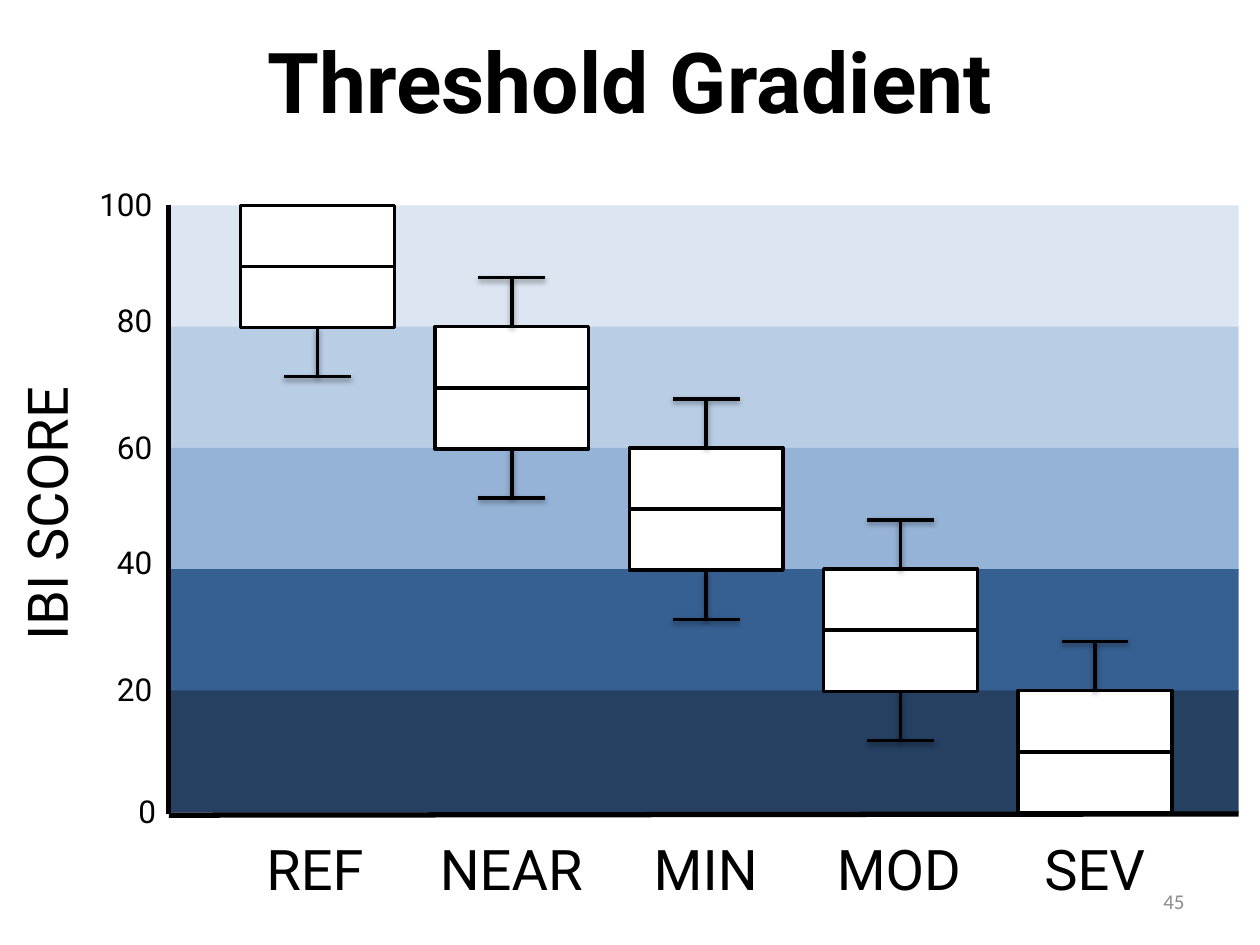
"""Build the Threshold Gradient slide: five box plots over shaded score bands."""
from lxml.etree import SubElement
from pptx import Presentation
from pptx.dml.color import RGBColor
from pptx.enum.shapes import MSO_CONNECTOR, MSO_SHAPE
from pptx.enum.text import MSO_ANCHOR, PP_ALIGN
from pptx.oxml.ns import qn
from pptx.util import Inches, Pt

BLACK = RGBColor(0x00, 0x00, 0x00)
WHITE = RGBColor(0xFF, 0xFF, 0xFF)
GREY = RGBColor(0x8C, 0x8C, 0x8C)
BANDS = [
    RGBColor(0xDC, 0xE6, 0xF2),
    RGBColor(0xB9, 0xCD, 0xE5),
    RGBColor(0x95, 0xB3, 0xD7),
    RGBColor(0x37, 0x60, 0x92),
    RGBColor(0x25, 0x40, 0x61),
]

AXIS_X, RIGHT, TOP, BOTTOM = 1.34, 9.83, 1.63, 6.46
BAND_STEP, BAND_H = (5.48 - TOP) / 4, 0.97
BOX_X, BOX_W = 1.91, 1.22
BOX_STEP = (8.08 - BOX_X) / 4
WHISKER, CAP = 0.39, 0.53

CATEGORIES = [("REF", 1.01), ("NEAR", 1.34), ("MIN", 1.03), ("MOD", 1.21), ("SEV", 1.0)]
TICKS = [
    ("100", 0.69, 1.42, 0.84),
    ("80", 0.83, 2.34, 0.59),
    ("60", 0.83, 3.35, 0.84),
    ("40", 0.83, 4.26, 0.56),
    ("20", 0.83, 5.27, 0.56),
    ("0", 1.0, 6.24, 0.5),
]


class Deck:
    """Hold the text style and the current slide."""

    font = {"name": "Roboto", "size": Pt(18), "bold": False}

    def __init__(self, slide):
        self.s = slide

    def add_run(self, tf, text, color=BLACK, align=PP_ALIGN.LEFT, **changes):
        p = tf.paragraphs[0]
        p.alignment = align
        r = p.add_run()
        r.text = text
        for name, value in {**self.font, **changes}.items():
            setattr(r.font, name, value)
        r.font.color.rgb = color

    def title(self, text, x, y, w, h):
        sp = self.s.shapes.title
        frame = {"left": x, "top": y, "width": w, "height": h}
        for name, value in frame.items():
            setattr(sp, name, Inches(value))
        sp.text_frame.vertical_anchor = MSO_ANCHOR.MIDDLE
        self.add_run(sp.text_frame, text, align=PP_ALIGN.CENTER, size=Pt(48), bold=True)

    def text(self, text, x, y, w, h, wrap=True, anchor=MSO_ANCHOR.TOP, **style):
        sp = self.s.shapes.add_textbox(Inches(x), Inches(y), Inches(w), Inches(h))
        sp.text_frame.word_wrap = wrap
        sp.text_frame.vertical_anchor = anchor
        self.add_run(sp.text_frame, text, **style)
        return sp

    def rect(self, x, y, w, h, fill, line=None):
        sp = self.s.shapes.add_shape(
            MSO_SHAPE.RECTANGLE, Inches(x), Inches(y), Inches(w), Inches(h))
        sp.shadow.inherit = False
        sp.fill.solid()
        sp.fill.fore_color.rgb = fill
        if line:
            sp.line.color.rgb = BLACK
            sp.line.width = Pt(line)
        else:
            sp.line.fill.background()
        return sp

    def line(self, x1, y1, x2, y2, width, shadow=False):
        cx = self.s.shapes.add_connector(
            MSO_CONNECTOR.STRAIGHT, Inches(x1), Inches(y1), Inches(x2), Inches(y2))
        cx.line.color.rgb = BLACK
        cx.line.width = Pt(width)
        effects = SubElement(cx._element.spPr, qn("a:effectLst"))
        if shadow:
            outer = SubElement(
                effects, qn("a:outerShdw"), blurRad=str(Pt(3.1)), dist=str(Pt(1.6)),
                dir="5400000", rotWithShape="0")
            color = SubElement(outer, qn("a:srgbClr"), val=str(BLACK))
            SubElement(color, qn("a:alpha"), val="38000")
        return cx

    def whisker(self, box, site, x, y, length):
        stem = self.line(x, y, x, y + length, 2, shadow=True)
        stem.begin_connect(box, site)
        self.line(x - CAP / 2, y + length, x + CAP / 2, y + length, 2, shadow=True)

    def box_plot(self, x, y, upper, lower):
        box = self.rect(x, y, BOX_W, BAND_H, WHITE, line=2)
        middle = y + BAND_H / 2
        median = self.line(x, middle, x + BOX_W, middle, 2.25)
        median.begin_connect(box, 1)
        median.end_connect(box, 3)
        if upper:
            self.whisker(box, 0, x + BOX_W / 2, y, -WHISKER)
        if lower:
            self.whisker(box, 2, x + BOX_W / 2, y + BAND_H, WHISKER)


def main():
    prs = Presentation()
    prs.slide_width, prs.slide_height = Inches(10), Inches(7.5)
    deck = Deck(prs.slides.add_slide(prs.slide_layouts[5]))
    deck.title("Threshold Gradient", 0, 0.01, 10, 1.25)

    for i, color in enumerate(BANDS):
        deck.rect(AXIS_X, TOP + i * BAND_STEP, RIGHT - AXIS_X, BAND_H, color)

    last = len(CATEGORIES) - 1
    for i, (name, w) in enumerate(CATEGORIES):
        x = BOX_X + i * BOX_STEP
        deck.box_plot(x, TOP + i * BAND_STEP, upper=i > 0, lower=i < last)
        deck.text(name, x + (BOX_W - w) / 2, 6.57, w, 0.68, wrap=False, size=Pt(32))

    deck.line(AXIS_X, TOP, AXIS_X, BOTTOM, 3)
    deck.line(RIGHT, BOTTOM, AXIS_X, BOTTOM + 0.01, 3)
    for label, x, y, w in TICKS:
        deck.text(label, x, y, w, 0.43)

    score = deck.text("IBI SCORE", -0.74, 3.72, 2.25, 0.68, wrap=False, size=Pt(32))
    score.rotation = 270
    deck.text("45", 7.17, 6.95, 2.33, 0.4, anchor=MSO_ANCHOR.MIDDLE, color=GREY,
              align=PP_ALIGN.RIGHT, name="Calibri", size=Pt(12))
    prs.save("out.pptx")


if __name__ == "__main__":
    main()
